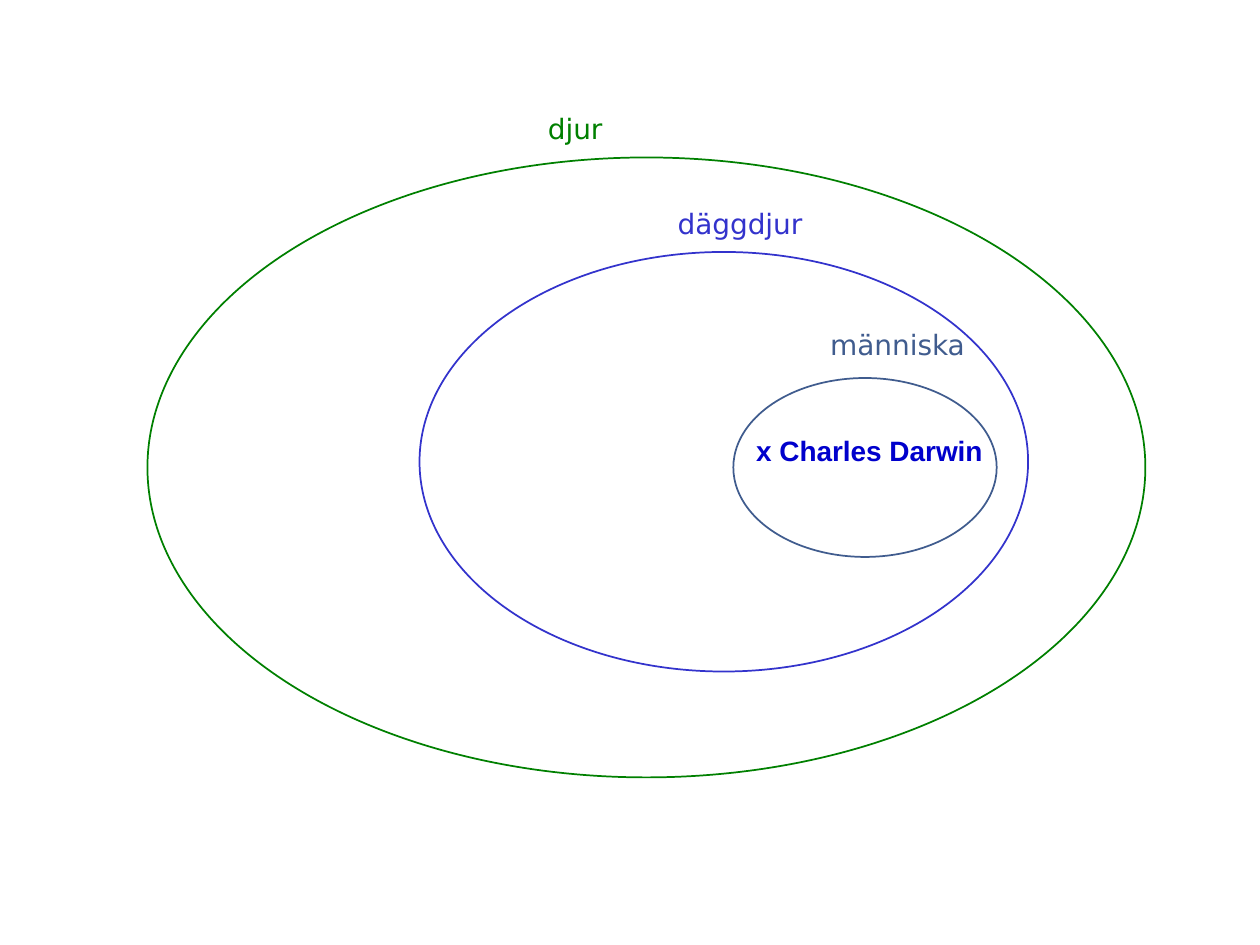
from pptx import Presentation
from pptx.dml.color import RGBColor
from pptx.enum.shapes import MSO_SHAPE
from pptx.enum.text import MSO_AUTO_SIZE, PP_ALIGN
from pptx.util import Inches, Pt

ELLIPSE = MSO_SHAPE.OVAL
GROW = MSO_AUTO_SIZE.SHAPE_TO_FIT_TEXT
LEFT, CENTER = PP_ALIGN.LEFT, PP_ALIGN.CENTER

COLORS = {
    "background": "FFFFFF",
    "animal": "008000",
    "mammal": "3333CC",
    "human": "405C8E",
    "member": "0000CC",
}

# Outermost set first: colour, ellipse box, label, label box
SETS = [
    ("animal", (1.17, 1.25, 7.92, 4.92), "djur", (4.25, 0.84, 1.25, 0.36)),
    ("mammal", (3.33, 2, 4.83, 3.33), "däggdjur", (5.28, 1.59, 1.47, 0.36)),
    ("human", (5.82, 3, 2.09, 1.42), "människa", (6.49, 2.55, 1.41, 0.37)),
]


def rgb(name):
    return RGBColor.from_string(COLORS[name])


def add_set(slide, box, color):
    """Draw the ellipse that bounds one set."""
    ellipse = slide.shapes.add_shape(ELLIPSE, *map(Inches, box))
    ellipse.shadow.inherit = False
    ellipse.fill.solid()
    ellipse.fill.fore_color.rgb = rgb("background")
    ellipse.line.color.rgb = rgb(color)
    ellipse.line.width = Pt(1)


def add_label(slide, box, text, color, font="DejaVu Sans", bold=False,
              align=LEFT, wrap=True):
    frame = slide.shapes.add_textbox(*map(Inches, box)).text_frame
    frame.word_wrap = wrap
    frame.auto_size = GROW
    paragraph = frame.paragraphs[0]
    paragraph.alignment = align
    run = paragraph.add_run()
    run.text = text
    for name, value in {"name": font, "size": Pt(16), "bold": bold}.items():
        setattr(run.font, name, value)
    run.font.color.rgb = rgb(color)


def main():
    presentation = Presentation()
    presentation.slide_width = Inches(10)
    presentation.slide_height = Inches(7.5)
    slide = presentation.slides.add_slide(presentation.slide_layouts[6])

    for color, box, _, _ in SETS:
        add_set(slide, box, color)
    for color, _, label, label_box in SETS:
        add_label(slide, label_box, label, color)
    add_label(slide, (5.89, 3.39, 2.02, 0.37), "x Charles Darwin", "member",
              font="Arial", bold=True, align=CENTER, wrap=False)

    presentation.save("out.pptx")


if __name__ == "__main__":
    main()
